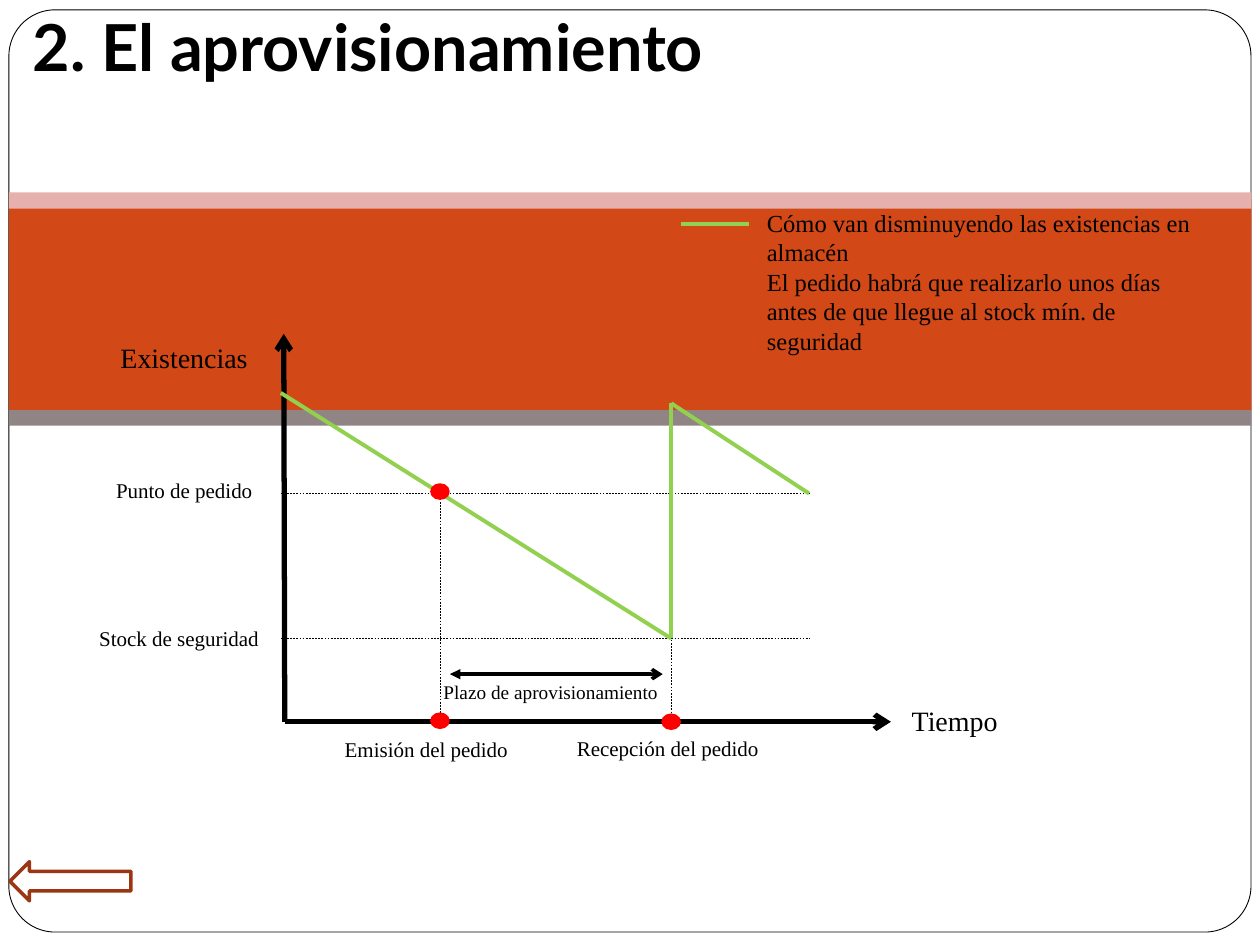
from lxml import etree
from pptx import Presentation
from pptx.dml.color import RGBColor
from pptx.enum.dml import MSO_LINE
from pptx.enum.shapes import MSO_CONNECTOR, MSO_SHAPE
from pptx.enum.text import MSO_ANCHOR
from pptx.oxml.ns import qn
from pptx.util import Cm, Pt

BLACK = RGBColor(0x00, 0x00, 0x00)
WHITE = RGBColor(0xFF, 0xFF, 0xFF)
ORANGE = RGBColor(0xD3, 0x48, 0x17)
PINK = RGBColor(0xE6, 0xB1, 0xAC)
GREY = RGBColor(0x91, 0x84, 0x85)
BROWN = RGBColor(0x9C, 0x35, 0x11)
GREEN = RGBColor(0x92, 0xD0, 0x50)
RED = RGBColor(0xFF, 0x00, 0x00)

STRAIGHT = MSO_CONNECTOR.STRAIGHT
DASHED = MSO_LINE.DASH
MIDDLE, TOP = MSO_ANCHOR.MIDDLE, MSO_ANCHOR.TOP
SERIF = "Times New Roman"

# Diagram positions in centimetres
AXIS_X, AXIS_Y = 5.74, 14.55
GUIDE_START, GUIDE_END = 5.66, 16.31
ORDER_X, RECEIPT_X = 8.87, 13.53
ORDER_Y, SAFETY_Y = 9.95, 12.87
START_Y, REFILL_Y = 7.92, 8.13

BANDS = [(4.01, 4.27, ORANGE), (3.88, 0.33, PINK), (8.27, 0.31, GREY)]
LABELS = [
    ((2.18, 6.75, 3.3, 0.94), 16, ["Existencias"]),
    ((18.13, 14.05, 2.59, 0.94), 16, ["Tiempo"]),
    ((6.7, 14.73, 3.99, 0.76), 12, ["Emisión del pedido"]),
    ((11.38, 14.71, 4.32, 0.76), 12, ["Recepción del pedido"]),
    ((8.69, 13.59, 5.49, 0.74), 11, ["Plazo de aprovisionamiento"]),
    ((2.09, 9.5, 3.61, 0.76), 12, ["Punto de pedido"]),
    ((1.75, 12.48, 3.99, 0.76), 12, ["Stock de seguridad"]),
    ((15.21, 4.07, 9.2, 3.25), 14, [
        "Cómo van disminuyendo las existencias en almacén",
        "El pedido habrá que realizarlo unos días antes de que llegue "
        "al stock mín. de seguridad",
    ]),
]


def add_box(page, kind, area, fill=None, line=None, width=1):
    box = page.shapes.add_shape(kind, *map(Cm, area))
    box.shadow.inherit = False
    if fill is None:
        box.fill.background()
    else:
        box.fill.solid()
        box.fill.fore_color.rgb = fill
    if line is None:
        box.line.fill.background()
    else:
        box.line.color.rgb = line
        box.line.width = Pt(width)
    return box


def add_text(page, area, size, lines, anchor=TOP, **formats):
    frame = page.shapes.add_textbox(*map(Cm, area)).text_frame
    frame.word_wrap = True
    frame.vertical_anchor = anchor
    for index, line in enumerate(lines):
        para = frame.add_paragraph() if index else frame.paragraphs[0]
        span = para.add_run()
        span.text = line
        span.font.color.rgb = BLACK
        for name, value in {"size": Pt(size), "name": SERIF, **formats}.items():
            setattr(span.font, name, value)


def add_line(page, start, end, color=BLACK, width=2.25, dash=None, **arrowheads):
    """Draw a line; arrowheads maps headEnd and tailEnd to arrow types."""
    line = page.shapes.add_connector(STRAIGHT, *map(Cm, start + end))
    line.line.color.rgb = color
    line.line.width = Pt(width)
    if dash is not None:
        line.line.dash_style = dash
    outline = line.line._get_or_add_ln()
    for tag, kind in arrowheads.items():
        etree.SubElement(outline, qn(f"a:{tag}"), type=kind)
    etree.SubElement(line._element.spPr, qn("a:effectLst"))


def add_dot(page, x, y):
    width, height = 0.36, 0.3
    area = (x - width / 2, y - height / 2, width, height)
    add_box(page, MSO_SHAPE.OVAL, area, RED, RED)


def add_background(page):
    card = add_box(page, MSO_SHAPE.ROUNDED_RECTANGLE,
                   (0.18, 0.2, 25.04, 18.59), WHITE, BLACK, 0.5)
    card.adjustments[0] = 0.05
    for top, height, color in BANDS:
        add_box(page, MSO_SHAPE.RECTANGLE, (0.18, top, 25.05, height), color)


def add_axes_and_guides(page):
    origin = (AXIS_X, AXIS_Y)
    for end in [(5.72, 6.73), (17.96, AXIS_Y)]:
        add_line(page, origin, end, width=3, tailEnd="arrow")
    for x, top, bottom in [(ORDER_X, 9.8, 14.53), (RECEIPT_X, 10.06, 14.71)]:
        add_line(page, (x, top), (x, bottom), width=0.25, dash=DASHED)
    for y in (ORDER_Y, SAFETY_Y):
        add_line(page, (GUIDE_START, y), (GUIDE_END, y), width=0.25, dash=DASHED)


def add_stock_curve(page):
    points = [(GUIDE_START, START_Y), (RECEIPT_X, SAFETY_Y),
              (RECEIPT_X, REFILL_Y), (GUIDE_END, ORDER_Y)]
    for start, end in zip(points, points[1:]):
        add_line(page, start, end, GREEN)


def main():
    deck = Presentation()
    deck.slide_width, deck.slide_height = Cm(25.4), Cm(19.05)
    page = deck.slides.add_slide(deck.slide_layouts[6])

    add_background(page)
    add_text(page, (0.41, 0.13, 23.8, 1.6), 37, ["2. El aprovisionamiento"],
             anchor=MIDDLE, name="Lato", bold=True)
    add_box(page, MSO_SHAPE.LEFT_ARROW, (0.2, 17.37, 2.44, 0.79),
            line=BROWN, width=2)
    add_axes_and_guides(page)
    for area, size, lines in LABELS:
        add_text(page, area, size, lines)
    add_stock_curve(page)
    add_line(page, (9.07, 13.59), (13.36, 13.59), width=2,
             headEnd="triangle", tailEnd="arrow")
    for x, y in [(ORDER_X, 14.53), (RECEIPT_X, AXIS_Y), (ORDER_X, 9.91)]:
        add_dot(page, x, y)
    add_line(page, (13.72, 4.52), (15.09, 4.52), GREEN)

    deck.save("out.pptx")


if __name__ == "__main__":
    main()
